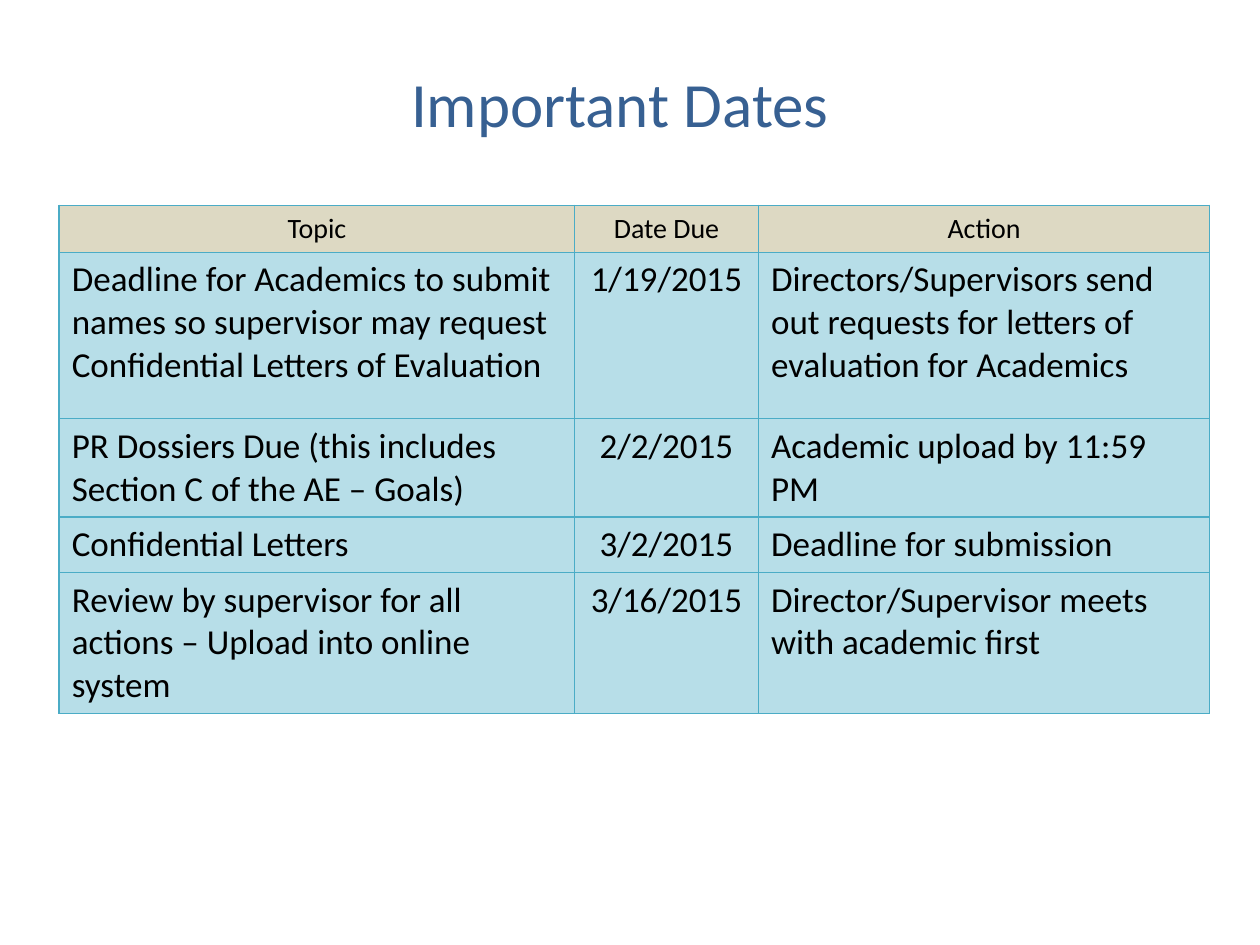
from lxml import etree
from pptx import Presentation
from pptx.dml.color import RGBColor
from pptx.enum import text
from pptx.oxml import ns
from pptx.util import Inches, Pt

FONT = "Calibri"
BLACK, TITLE_BLUE, BORDER = "000000", "376092", "4BACC6"
HEADER_FILL, BODY_FILL = "DDD9C3", "B7DEE8"
LEFT, CENTER = text.PP_ALIGN.LEFT, text.PP_ALIGN.CENTER

COLUMN_WIDTHS = [4.09, 1.46, 3.58]
ROW_HEIGHTS = [0.37, 1.32, 0.78, 0.44, 1.12]
ROWS = [
    ("Topic", "Date Due", "Action"),
    ("Deadline for Academics to submit names so supervisor may request "
     "Confidential Letters of Evaluation",
     "1/19/2015",
     "Directors/Supervisors send out requests for letters of evaluation for Academics"),
    ("PR Dossiers Due (this includes Section C of the AE – Goals)",
     "2/2/2015", "Academic upload by 11:59 PM"),
    ("Confidential Letters", "3/2/2015", "Deadline for submission"),
    ("Review by supervisor for all actions – Upload into online system",
     "3/16/2015", "Director/Supervisor meets with academic first"),
]


def color(value):
    return RGBColor.from_string(value)


def write(frame, words, size, ink, align):
    """Put one formatted paragraph in a text frame."""
    para = frame.paragraphs[0]
    para.alignment = align
    span = para.add_run()
    span.text = words
    formats = {"name": FONT, "size": Pt(size), "bold": False}
    for name, value in formats.items():
        setattr(span.font, name, value)
    span.font.color.rgb = color(ink)


def add_title(page, words):
    title = page.shapes.title
    box = {"left": 0.67, "top": 0.56, "width": 8.5, "height": 0.5}
    for name, value in box.items():
        setattr(title, name, Inches(value))
    title.text_frame.vertical_anchor = text.MSO_ANCHOR.MIDDLE
    title.text_frame.auto_size = text.MSO_AUTO_SIZE.NONE
    write(title.text_frame, words, 36, TITLE_BLUE, CENTER)


def add_borders(cell):
    properties = cell._tc.get_or_add_tcPr()
    for side in ("lnL", "lnR", "lnT", "lnB"):
        line = etree.SubElement(properties, ns.qn(f"a:{side}"), w=str(Pt(1)))
        fill = etree.SubElement(line, ns.qn("a:solidFill"))
        etree.SubElement(fill, ns.qn("a:srgbClr"), val=BORDER)


def add_dates_table(page):
    table = page.shapes.add_table(
        len(ROWS), len(COLUMN_WIDTHS), Inches(0.47), Inches(1.63),
        Inches(sum(COLUMN_WIDTHS)), Inches(sum(ROW_HEIGHTS))).table
    table.horz_banding = False
    for column, width in zip(table.columns, COLUMN_WIDTHS):
        column.width = Inches(width)
    for row, height in zip(table.rows, ROW_HEIGHTS):
        row.height = Inches(height)

    for r, row in enumerate(ROWS):
        header = r == 0
        for c, words in enumerate(row):
            cell = table.cell(r, c)
            add_borders(cell)
            cell.fill.solid()
            cell.fill.fore_color.rgb = color(HEADER_FILL if header else BODY_FILL)
            # Headings and the date column are centred
            align = CENTER if header or c == 1 else LEFT
            write(cell.text_frame, words, 16 if header else 20, BLACK, align)


def main():
    deck = Presentation()
    deck.slide_width, deck.slide_height = Inches(10), Inches(7.5)
    page = deck.slides.add_slide(deck.slide_layouts.get_by_name("Title Only"))
    add_title(page, "Important Dates")
    add_dates_table(page)
    deck.save("out.pptx")


if __name__ == "__main__":
    main()
